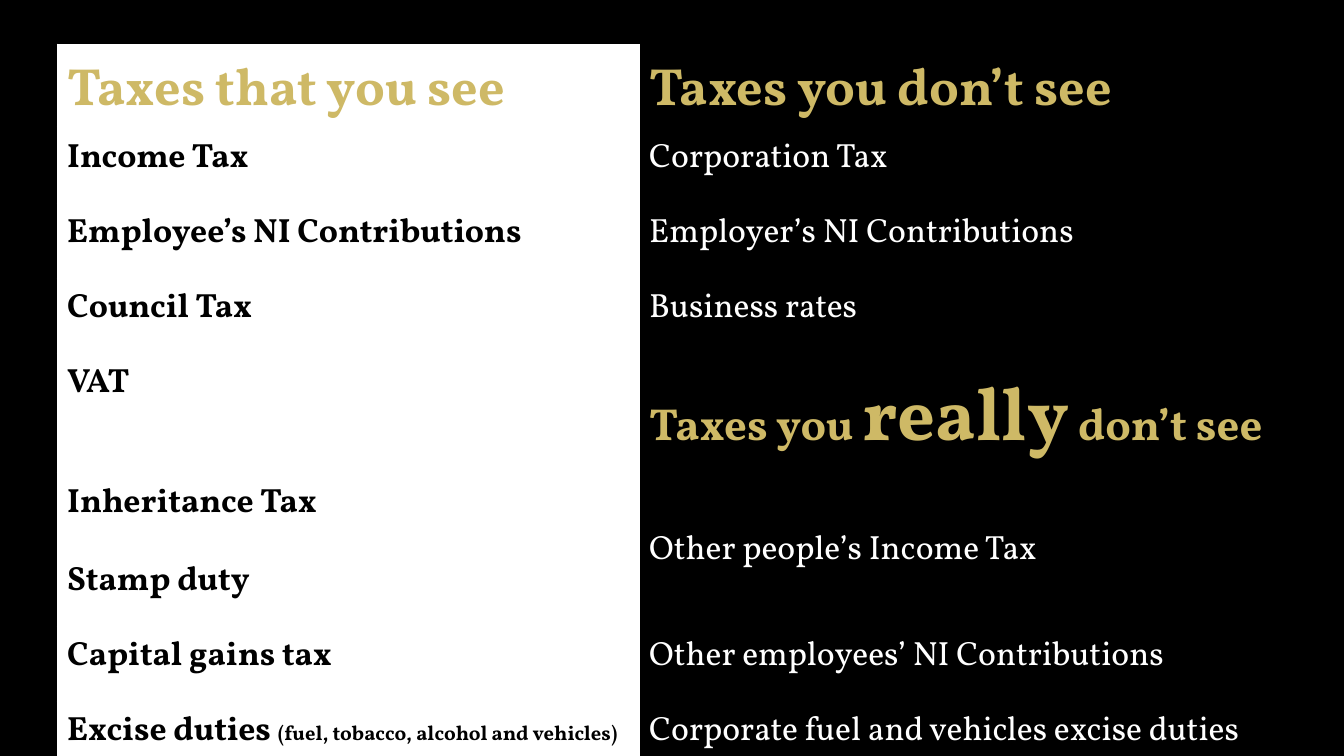
from dataclasses import dataclass

import pptx
import pptx.dml.color
import pptx.oxml
import pptx.oxml.ns
import pptx.util
from pptx.util import Cm

COLORS = {"black": "000000", "white": "FFFFFF", "gold": "CEB966"}
FONT = "Vollkorn"
COL_WIDTHS = [11, 12.19]
ROW_HEIGHTS = [1.24, 1.42, 1.42, 1.42, 1.57, 2.9, 1.42, 1.63]
MARGIN = 0.18


@dataclass
class Run:
    text: str
    size: float = 18
    color: str = "black"
    bold: bool = True


@dataclass
class Entry:
    paragraphs: list[list[Run]]
    top: float = 0
    gap: float = 0


def rgb(name: str) -> pptx.dml.color.RGBColor:
    return pptx.dml.color.RGBColor.from_string(COLORS[name])


def seen(text: str) -> Entry:
    return Entry([[Run(text)]])


def unseen(text: str, top: float = 0) -> Entry:
    return Entry([[Run(text, color="white", bold=False)]], top=top)


def heading(*parts: tuple[str, float]) -> Entry:
    return Entry([[Run(text, size, "gold") for text, size in parts]])


def add_text(p, text: str, *, size: float, color: str, bold: bool) -> None:
    r = p.add_run()
    r.text = text
    r.font.name = FONT
    r.font.size = pptx.util.Pt(size)
    r.font.bold = bold
    r.font.color.rgb = rgb(color)


def set_borders(cell, widths: dict[str, float]) -> None:
    """White line on each side named in widths, none on the others."""
    tc_pr = cell._tc.get_or_add_tcPr()
    ns = pptx.oxml.ns.nsdecls("a")
    for side in "LRTB":
        width = widths.get(side, 0)
        paint = (f'<a:solidFill><a:srgbClr val="{COLORS["white"]}"/></a:solidFill>'
                 if width else "<a:noFill/>")
        tc_pr.append(pptx.oxml.parse_xml(
            f'<a:ln{side} {ns} w="{pptx.util.Pt(width)}">{paint}</a:ln{side}>'))


def fill_cell(cell, entry: Entry, fill: str, borders: dict[str, float]) -> None:
    set_borders(cell, borders)
    cell.fill.solid()
    cell.fill.fore_color.rgb = rgb(fill)
    cell.margin_left = cell.margin_right = Cm(MARGIN)
    cell.margin_top, cell.margin_bottom = Cm(entry.top), 0
    tf = cell.text_frame
    for i, runs in enumerate(entry.paragraphs):
        p = tf.add_paragraph() if i else tf.paragraphs[0]
        p.line_spacing = 1.15
        if i:
            p.space_before = pptx.util.Pt(entry.gap)
        for run in runs:
            add_text(p, run.text, size=run.size, color=run.color, bold=run.bold)


# Left and right entry of each table row
ROWS = [
    (heading(("Taxes that you see", 28)), heading(("Taxes you don’t see", 28))),
    (seen("Income Tax"), unseen("Corporation Tax")),
    (seen("Employee’s NI Contributions"), unseen("Employer’s NI Contributions")),
    (seen("Council Tax"), unseen("Business rates")),
    (seen("VAT"), heading(("Taxes you ", 24), ("really", 40), (" don’t see", 24))),
    (Entry([[Run("Inheritance Tax")], [Run("Stamp duty")]], gap=13),
     unseen("Other people’s Income Tax", top=0.89)),
    (seen("Capital gains tax"), unseen("Other employees’ NI Contributions")),
    (Entry([[Run("Excise duties "),
             Run("(fuel, tobacco, alcohol and vehicles)", 11)]]),
     unseen("Corporate fuel and vehicles excise duties")),
]


def main() -> None:
    prs = pptx.Presentation()
    prs.slide_width, prs.slide_height = Cm(25.4), Cm(14.29)
    s = prs.slides.add_slide(prs.slide_layouts[6])

    # Background
    s.background.fill.solid()
    s.background.fill.fore_color.rgb = rgb("black")

    # Table of visible and hidden taxes
    table = s.shapes.add_table(len(ROWS), len(COL_WIDTHS), Cm(1.09), Cm(0.84),
                               Cm(sum(COL_WIDTHS)), Cm(13.28)).table
    table.first_row = table.horz_banding = False
    for column, width in zip(table.columns, COL_WIDTHS):
        column.width = Cm(width)
    for i, (height, (left, right)) in enumerate(zip(ROW_HEIGHTS, ROWS)):
        table.rows[i].height = Cm(height)
        fill_cell(table.cell(i, 0), left, "white", {"L": 1, "T": 1, "B": 1 if i else 3})
        fill_cell(table.cell(i, 1), right, "black", {})

    prs.save("out.pptx")


if __name__ == "__main__":
    main()
